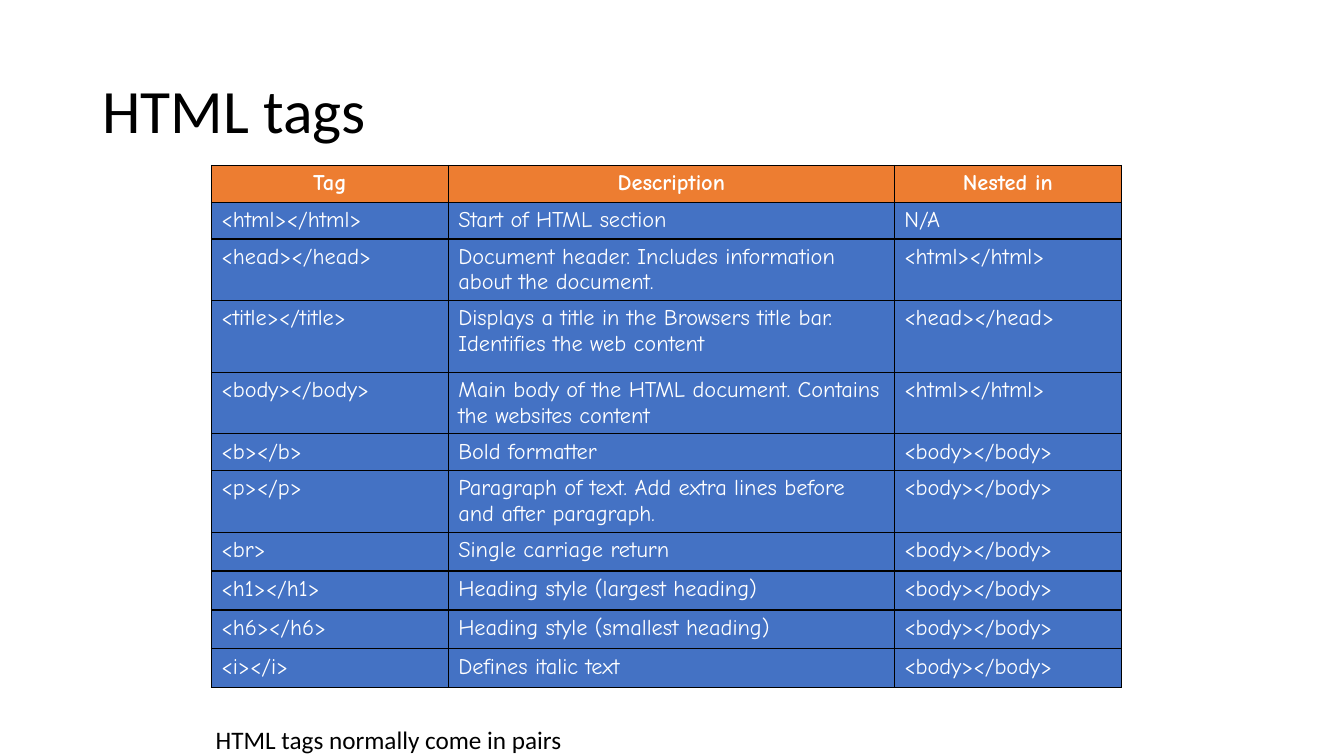
from lxml.etree import SubElement
from pptx import Presentation
from pptx.dml.color import RGBColor
from pptx.enum.text import MSO_ANCHOR as Anchor, MSO_AUTO_SIZE as AutoSize, PP_ALIGN as Align
from pptx.oxml.ns import qn
from pptx.util import Pt

BLACK = RGBColor(0x00, 0x00, 0x00)
WHITE = RGBColor(0xFF, 0xFF, 0xFF)
ORANGE = RGBColor(0xED, 0x7D, 0x31)
BLUE = RGBColor(0x44, 0x72, 0xC4)

TITLE_FONT = {"name": "Calibri", "size": Pt(44)}
NOTE_FONT = {"name": "Calibri", "size": Pt(18)}
HEADER_FONT = {"name": "Comic Neue", "size": Pt(16), "bold": True}
BODY_FONT = {**HEADER_FONT, "bold": False}

COLUMN_WIDTHS = [169.2, 318.6, 162.2]
ONE_LINE, TWO_LINES, TALL, LOOSE = 26.3, 43.8, 51.2, 27.8
TAG_ROWS = [
    (ONE_LINE, "Tag", "Description", "Nested in"),
    (ONE_LINE, "<html></html>", "Start of HTML section", "N/A"),
    (TWO_LINES, "<head></head>", "Document header. Includes information about the document.", "<html></html>"),
    (TALL, "<title></title>", "Displays a title in the Browsers title bar. Identifies the web content", "<head></head>"),
    (TWO_LINES, "<body></body>", "Main body of the HTML document. Contains the websites content", "<html></html>"),
    (ONE_LINE, "<b></b>", "Bold formatter", "<body></body>"),
    (TWO_LINES, "<p></p>", "Paragraph of text. Add extra lines before and after paragraph.", "<body></body>"),
    (LOOSE, "<br>", "Single carriage return", "<body></body>"),
    (LOOSE, "<h1></h1>", "Heading style (largest heading)", "<body></body>"),
    (LOOSE, "<h6></h6>", "Heading style (smallest heading)", "<body></body>"),
    (LOOSE, "<i></i>", "Defines italic text", "<body></body>"),
]


def write(frame, text, font_values, color, align=Align.LEFT):
    frame.text = text
    paragraph = frame.paragraphs[0]
    paragraph.alignment = align
    font = paragraph.runs[0].font
    for attribute, value in font_values.items():
        setattr(font, attribute, value)
    font.color.rgb = color
    return paragraph


def add_borders(cell, color, width):
    properties = cell._tc.get_or_add_tcPr()
    for side in ("lnL", "lnR", "lnT", "lnB"):
        line = SubElement(properties, qn(f"a:{side}"), w=str(width))
        fill = SubElement(line, qn("a:solidFill"))
        SubElement(fill, qn("a:srgbClr"), val=str(color))


deck = Presentation()
deck.slide_width, deck.slide_height = Pt(960), Pt(540)
slide = deck.slides.add_slide(deck.slide_layouts[5])

# Title
title = slide.shapes.title
title.left, title.top, title.width, title.height = Pt(66), Pt(28.8), Pt(828), Pt(104.4)
title.text_frame.vertical_anchor = Anchor.MIDDLE
write(title.text_frame, "HTML tags", TITLE_FONT, BLACK).line_spacing = 0.9

# Table of tags
tags = slide.shapes.add_table(
    len(TAG_ROWS), len(COLUMN_WIDTHS), Pt(151), Pt(118.2),
    Pt(sum(COLUMN_WIDTHS)), Pt(sum(row[0] for row in TAG_ROWS))).table
for column, width in zip(tags.columns, COLUMN_WIDTHS):
    column.width = Pt(width)
for row_index, (height, *texts) in enumerate(TAG_ROWS):
    tags.rows[row_index].height = Pt(height)
    if row_index == 0:
        fill_color, font_values, align = ORANGE, HEADER_FONT, Align.CENTER
    else:
        fill_color, font_values, align = BLUE, BODY_FONT, Align.LEFT
    for column_index, text in enumerate(texts):
        cell = tags.cell(row_index, column_index)
        add_borders(cell, BLACK, Pt(1))
        cell.fill.solid()
        cell.fill.fore_color.rgb = fill_color
        write(cell.text_frame, text, font_values, WHITE, align)

# Note under the table
note = slide.shapes.add_textbox(Pt(147), Pt(514), Pt(264), Pt(29)).text_frame
note.word_wrap = False
note.auto_size = AutoSize.SHAPE_TO_FIT_TEXT
write(note, "HTML tags normally come in pairs", NOTE_FONT, BLACK)

deck.save("out.pptx")
